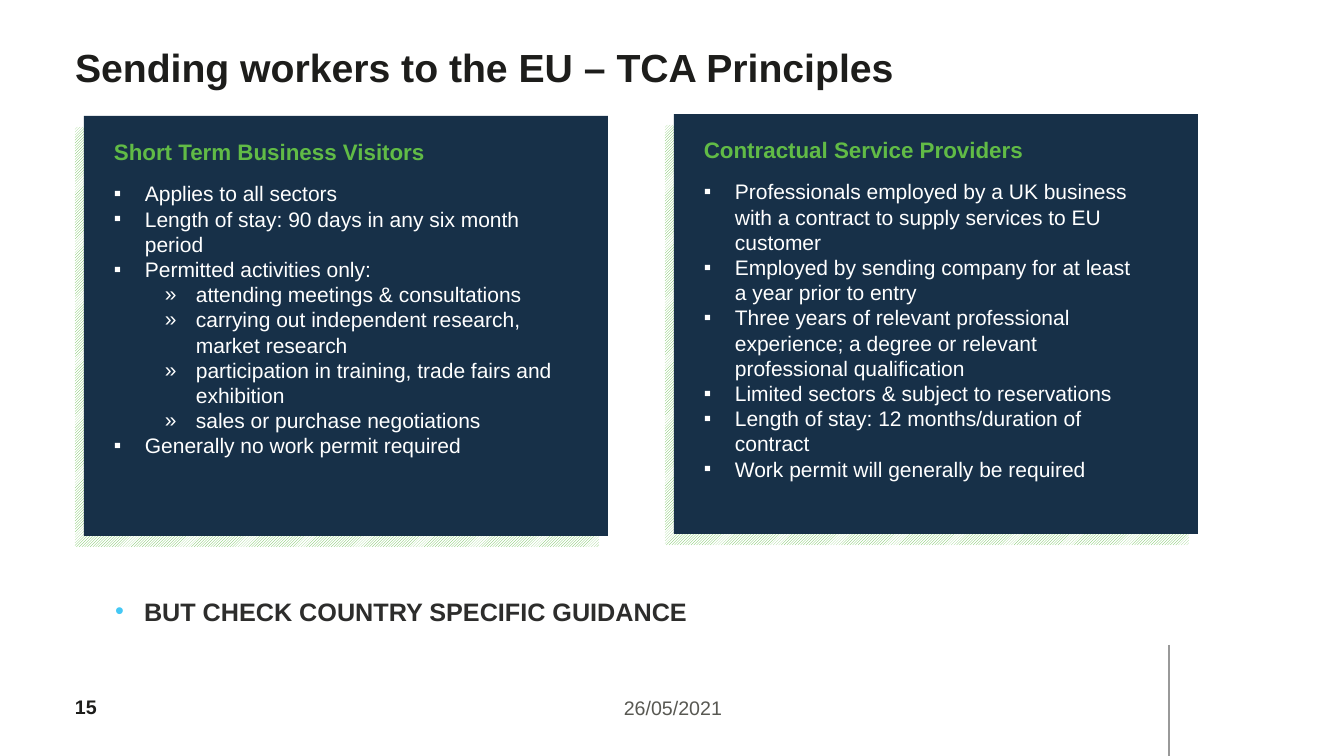
from lxml import etree
from pptx import Presentation
from pptx.dml.color import RGBColor
from pptx.enum.dml import MSO_PATTERN
from pptx.enum.shapes import MSO_CONNECTOR, MSO_SHAPE
from pptx.enum.text import MSO_ANCHOR as ANCHOR, PP_ALIGN as ALIGN
from pptx.oxml.ns import qn
from pptx.util import Pt

# Content
TITLE = "Sending workers to the EU – TCA Principles"
REMINDER = "BUT CHECK COUNTRY SPECIFIC GUIDANCE"
DATE = "26/05/2021"
PAGE_NUMBER = "15"

# Each panel: left, top, body width, body height, heading, (level, text) points
PANELS = [
    (75, 127, 467, 290, "Short Term Business Visitors", [
        (0, "Applies to all sectors"),
        (0, "Length of stay: 90 days in any six month period"),
        (0, "Permitted activities only:"),
        (1, "attending meetings & consultations"),
        (1, "carrying out independent research, market research"),
        (1, "participation in training, trade fairs and exhibition"),
        (1, "sales or purchase negotiations"),
        (0, "Generally no work permit required"),
    ]),
    (665, 125, 459, 315, "Contractual Service Providers", [
        (0, "Professionals employed by a UK business with a contract "
            "to supply services to EU customer"),
        (0, "Employed by sending company for at least a year prior to entry"),
        (0, "Three years of relevant professional experience; a degree or "
            "relevant professional qualification"),
        (0, "Limited sectors & subject to reservations"),
        (0, "Length of stay: 12 months/duration of contract"),
        (0, "Work permit will generally be required"),
    ]),
]

# Level: bullet, text indent in px
BULLETS = {0: ("▪", 31), 1: ("»", 82)}
HANGING = 31
PANEL_WIDTH, PANEL_HEIGHT = 524, 420

WHITE = RGBColor(0xFF, 0xFF, 0xFF)
NAVY = RGBColor(0x17, 0x30, 0x48)
GREEN = RGBColor(0x61, 0xBB, 0x46)
BLUE = RGBColor(0x44, 0xC8, 0xF5)
INK = RGBColor(0x1D, 0x1D, 0x1B)
CHARCOAL = RGBColor(0x2D, 0x2D, 0x2C)
GREY = RGBColor(0x58, 0x58, 0x52)
RULE_GREY = RGBColor(0x99, 0x99, 0x99)


def px(length):
    return round(length * 914400 / 100.8)


def set_margins(frame, top=0):
    frame.margin_left = frame.margin_right = frame.margin_bottom = 0
    frame.margin_top = px(top)


def add_bullet(para, mark, indent, hanging, color=None):
    props = para._p.get_or_add_pPr()
    props.set("marL", str(px(indent)))
    props.set("indent", str(-px(hanging)))
    if color is not None:
        holder = etree.SubElement(props, qn("a:buClr"))
        etree.SubElement(holder, qn("a:srgbClr")).set("val", str(color))
    etree.SubElement(props, qn("a:buFont")).set("typeface", "Arial")
    etree.SubElement(props, qn("a:buChar")).set("char", mark)


def style(para, size, color, bold=False, align=ALIGN.LEFT):
    para.alignment = align
    font = para.font
    font.name, font.size, font.bold = "Arial", Pt(size), bold
    font.color.rgb = color


def add_box(shapes, left, top, width, height, text=""):
    box = shapes.add_textbox(px(left), px(top), px(width), px(height))
    frame = box.text_frame
    frame.word_wrap = True
    frame.text = text
    return frame


def add_rectangle(shapes, left, top):
    rectangle = shapes.add_shape(MSO_SHAPE.RECTANGLE, px(left), px(top),
                                 px(PANEL_WIDTH), px(PANEL_HEIGHT))
    rectangle.shadow.inherit = False
    rectangle.line.fill.background()
    return rectangle


def add_panel(slide, left, top, body_width, body_height, heading, points):
    shapes = slide.shapes.add_group_shape().shapes
    # Hatched backing and navy card
    hatch = add_rectangle(shapes, left, top).fill
    hatch.patterned()
    hatch.pattern = MSO_PATTERN.DARK_UPWARD_DIAGONAL
    hatch.fore_color.rgb, hatch.back_color.rgb = GREEN, WHITE
    card = add_rectangle(shapes, left + 9, top - 11).fill
    card.solid()
    card.fore_color.rgb = NAVY

    # Heading and bullet points
    frame = add_box(shapes, left + 29, top + 6, 399, 37, heading)
    style(frame.paragraphs[0], 16, GREEN, bold=True)
    frame = add_box(shapes, left + 29, top + 49, body_width, body_height,
                    "\n".join(text for _, text in points))
    for para, (level, _) in zip(frame.paragraphs, points):
        para.level = level
        add_bullet(para, *BULLETS[level], HANGING)
        style(para, 15, WHITE)


def main():
    deck = Presentation()
    deck.slide_width, deck.slide_height = px(1344), px(756)
    slide = deck.slides.add_slide(deck.slide_layouts[5])

    # Title
    title = slide.shapes.title
    title.left, title.top, title.width, title.height = map(px, (75, 39, 1075, 99))
    frame = title.text_frame
    frame.text = TITLE
    frame.vertical_anchor = ANCHOR.TOP
    set_margins(frame, top=4)
    style(frame.paragraphs[0], 28, INK, bold=True)

    # Panels
    for panel in PANELS:
        add_panel(slide, *panel)

    # Reminder
    frame = add_box(slide.shapes, 115, 581, 969, 90, REMINDER)
    set_margins(frame)
    para = frame.paragraphs[0]
    add_bullet(para, "•", 29, 29, BLUE)
    para.line_spacing = 1.5
    style(para, 18, CHARCOAL, bold=True)

    # Footer
    frame = add_box(slide.shapes, 446, 691, 454, 34, DATE)
    style(frame.paragraphs[0], 14, GREY, align=ALIGN.CENTER)
    frame = add_box(slide.shapes, 75, 687, 75, 40, PAGE_NUMBER)
    set_margins(frame)
    frame.vertical_anchor = ANCHOR.MIDDLE
    style(frame.paragraphs[0], 14, INK, bold=True)
    rule = slide.shapes.add_connector(MSO_CONNECTOR.STRAIGHT,
                                      px(1169), px(645), px(1169), px(756))
    rule.line.color.rgb = RULE_GREY
    rule.line.width = Pt(1.25)
    etree.SubElement(rule._element.spPr, qn("a:effectLst"))

    deck.save("out.pptx")


if __name__ == "__main__":
    main()
